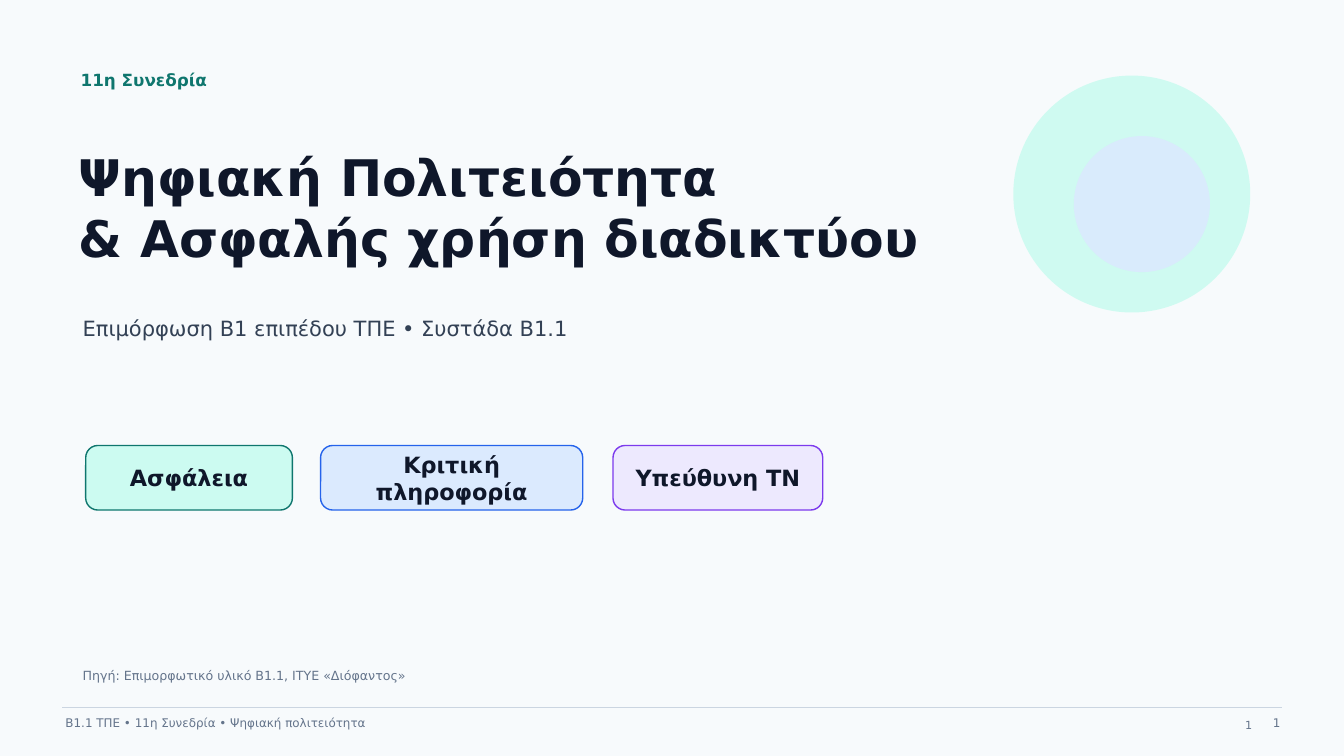
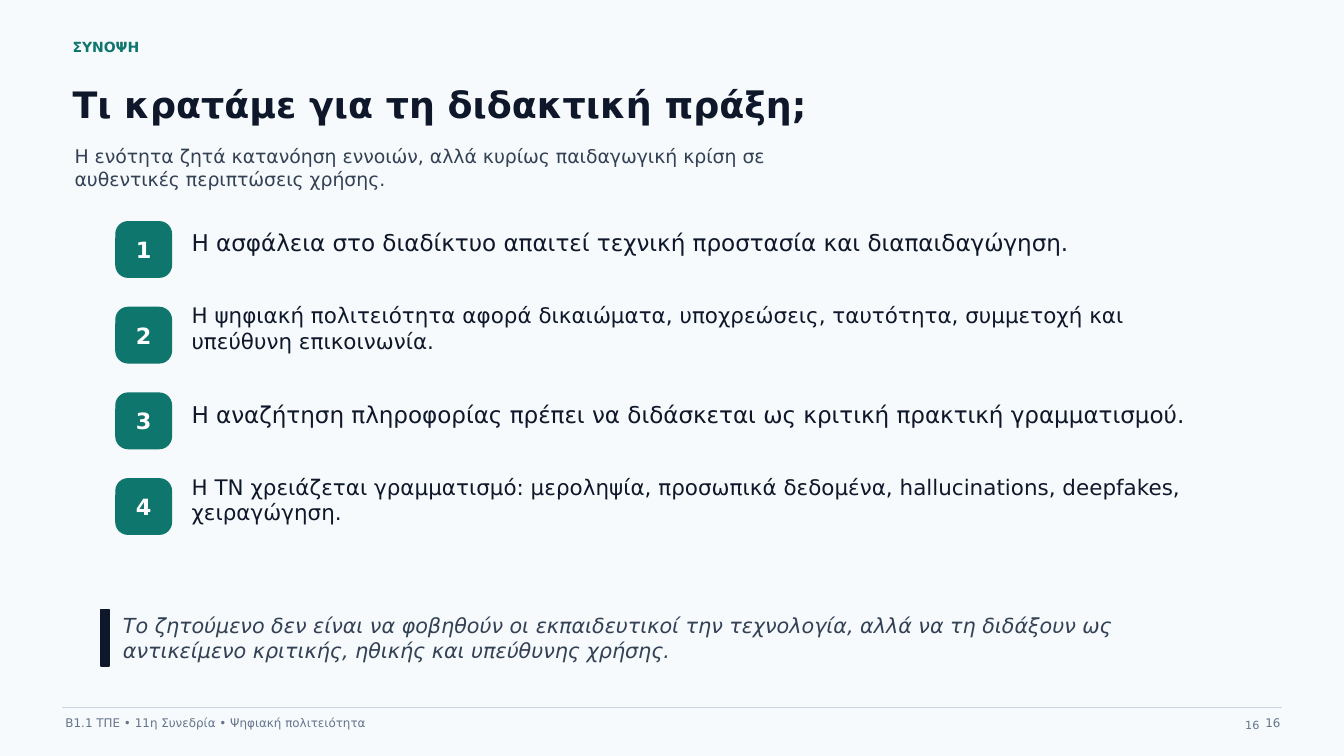
from dataclasses import dataclass

from lxml import etree
from pptx import Presentation
from pptx.dml.color import RGBColor
from pptx.enum.shapes import MSO_CONNECTOR as CONN, MSO_SHAPE as SHAPE
from pptx.enum.text import MSO_ANCHOR as ANCHOR, PP_ALIGN as ALIGN
from pptx.oxml.ns import qn
from pptx.util import Inches, Pt

# Shared look
FONT = "DejaVu Sans"
PAPER, INK, SLATE, MUTED, RULE = "F7FAFC", "0F172A", "334155", "64748B", "CBD5E1"
TEAL, MINT, BLUE, SKY = "0F766E", "CCFBF1", "2563EB", "DBEAFE"
VIOLET, LILAC, WHITE = "7C3AED", "EDE9FE", "FFFFFF"
FOOTER = "Β1.1 ΤΠΕ • 11η Συνεδρία • Ψηφιακή πολιτειότητα"
CORNER = 0.12


@dataclass(frozen=True)
class Style:
    size: float
    color: str = INK
    bold: bool = False
    italic: bool = False
    align: ALIGN = ALIGN.LEFT


@dataclass(frozen=True)
class Box:
    x: float
    y: float
    w: float
    h: float

    def lengths(self) -> list:
        return [Inches(v) for v in (self.x, self.y, self.w, self.h)]


@dataclass(frozen=True)
class Chip:
    text: str
    x: float
    w: float
    fill: str
    line: str


@dataclass(frozen=True)
class Point:
    text: str
    size: float


EYEBROW = Style(10, TEAL, bold=True)
TITLE = Style(26, bold=True)
SUBTITLE = Style(13.5, SLATE)
SMALL = Style(8.5, MUTED)
LABEL = Style(16, bold=True, align=ALIGN.CENTER)
BADGE = Style(16, WHITE, bold=True, align=ALIGN.CENTER)

CHIPS = [
    Chip("Ασφάλεια", 0.85, 2.05, MINT, TEAL),
    Chip("Κριτική πληροφορία", 3.18, 2.6, SKY, BLUE),
    Chip("Υπεύθυνη ΤΝ", 6.08, 2.08, LILAC, VIOLET),
]
POINTS = [
    Point("Η ασφάλεια στο διαδίκτυο απαιτεί τεχνική προστασία και "
          "διαπαιδαγώγηση.", 16.5),
    Point("Η ψηφιακή πολιτειότητα αφορά δικαιώματα, υποχρεώσεις, ταυτότητα, "
          "συμμετοχή και υπεύθυνη επικοινωνία.", 15.3),
    Point("Η αναζήτηση πληροφορίας πρέπει να διδάσκεται ως κριτική πρακτική "
          "γραμματισμού.", 16.5),
    Point("Η ΤΝ χρειάζεται γραμματισμό: μεροληψία, προσωπικά δεδομένα, "
          "hallucinations, deepfakes, χειραγώγηση.", 15.3),
]


def rgb(color: str) -> RGBColor:
    return RGBColor.from_string(color)


def write(tf, text: str, style: Style, inset: float = 0) -> None:
    """Fill a text frame, one paragraph for each line of text."""
    frame = dict.fromkeys(
        ("margin_left", "margin_top", "margin_right", "margin_bottom"),
        Inches(inset))
    frame |= {"word_wrap": True, "vertical_anchor": ANCHOR.MIDDLE}
    for name, value in frame.items():
        setattr(tf, name, value)
    font = {"name": FONT, "size": Pt(style.size), "bold": style.bold,
            "italic": style.italic}
    for i, line in enumerate(text.split("\n")):
        p = tf.add_paragraph() if i else tf.paragraphs[0]
        p.alignment = style.align
        r = p.add_run()
        r.text = line
        for name, value in font.items():
            setattr(r.font, name, value)
        r.font.color.rgb = rgb(style.color)


def add_text(s, box: Box, text: str, style: Style):
    sp = s.shapes.add_textbox(*box.lengths())
    write(sp.text_frame, text, style)
    return sp


def add_shape(s, kind: SHAPE, box: Box, fill: str, line: str = "",
              alpha: int = 100):
    sp = s.shapes.add_shape(kind, *box.lengths())
    sp.shadow.inherit = False
    sp.fill.solid()
    sp.fill.fore_color.rgb = rgb(fill)
    if alpha < 100:
        color = sp.fill._xPr.find(".//" + qn("a:srgbClr"))
        etree.SubElement(color, qn("a:alpha"), val=str(alpha * 1000))
    if line:
        sp.line.color.rgb = rgb(line)
        sp.line.width = Pt(1)
    else:
        sp.line.fill.background()
    return sp


def add_label(s, box: Box, text: str, style: Style, fill: str, line: str) -> None:
    """Rounded box with a centred label and a fixed corner radius."""
    sp = add_shape(s, SHAPE.ROUNDED_RECTANGLE, box, fill, line)
    sp.adjustments[0] = CORNER / box.h
    write(sp.text_frame, text, style, inset=0.04)


def add_footer(s, number: int) -> None:
    rule = s.shapes.add_connector(CONN.STRAIGHT, Inches(0.62), Inches(7.02),
                                  Inches(12.72), Inches(7.02))
    rule.line.color.rgb = rgb(RULE)
    rule.line.width = Pt(0.8)
    etree.SubElement(rule._element.spPr, qn("a:effectLst"))
    add_text(s, Box(0.65, 7.08, 7, 0.18), FOOTER, SMALL)
    add_text(s, Box(12.25, 7.08, 0.45, 0.18), str(number),
             Style(8.5, MUTED, align=ALIGN.RIGHT))
    # Second page number, set lower and to the left
    add_text(s, Box(12.35, 7.13, 0.67, 0.23), str(number),
             Style(8, MUTED)).text_frame.vertical_anchor = ANCHOR.TOP


def new_slide(prs, number: int):
    s = prs.slides.add_slide(prs.slide_layouts[6])
    s.background.fill.solid()
    s.background.fill.fore_color.rgb = rgb(PAPER)
    add_footer(s, number)
    return s


def cover_slide(prs) -> None:
    s = new_slide(prs, 1)
    # Circles
    add_shape(s, SHAPE.OVAL, Box(10.05, 0.75, 2.35, 2.35), MINT, alpha=92)
    add_shape(s, SHAPE.OVAL, Box(10.65, 1.35, 1.35, 1.35), SKY, alpha=90)
    # Headings
    add_text(s, Box(0.8, 0.65, 3.5, 0.28), "11η Συνεδρία",
             Style(12, TEAL, bold=True))
    add_text(s, Box(0.78, 1.25, 8.7, 1.6),
             "Ψηφιακή Πολιτειότητα\n& Ασφαλής χρήση διαδικτύου",
             Style(36, bold=True))
    add_text(s, Box(0.82, 3.08, 6.6, 0.35),
             "Επιμόρφωση Β1 επιπέδου ΤΠΕ • Συστάδα Β1.1", Style(15, SLATE))
    # Theme chips
    for chip in CHIPS:
        add_label(s, Box(chip.x, 4.42, chip.w, 0.64), chip.text, LABEL,
                  chip.fill, chip.line)
    # Source
    add_text(s, Box(0.82, 6.56, 6.6, 0.28),
             "Πηγή: Επιμορφωτικό υλικό Β1.1, ΙΤΥΕ «Διόφαντος»",
             Style(9, MUTED))


def summary_slide(prs) -> None:
    s = new_slide(prs, 16)
    # Headings
    add_text(s, Box(0.72, 0.34, 4.6, 0.25), "ΣΥΝΟΨΗ", EYEBROW)
    add_text(s, Box(0.72, 0.72, 7.8, 0.62),
             "Τι κρατάμε για τη διδακτική πράξη;", TITLE)
    add_text(s, Box(0.74, 1.42, 7.7, 0.48),
             "Η ενότητα ζητά κατανόηση εννοιών, αλλά κυρίως παιδαγωγική κρίση "
             "σε αυθεντικές περιπτώσεις χρήσης.", SUBTITLE)
    # Numbered points
    for i, point in enumerate(POINTS):
        y = 2.2 + 0.85 * i
        add_label(s, Box(1.15, y, 0.55, 0.55), str(i + 1), BADGE, TEAL, TEAL)
        add_text(s, Box(1.9, y - 0.02, 9.85, 0.45), point.text,
                 Style(point.size))
    # Closing remark
    add_shape(s, SHAPE.RECTANGLE, Box(1, 6.05, 0.08, 0.56), INK, INK)
    add_text(s, Box(1.22, 6.1, 10.6, 0.46),
             "Το ζητούμενο δεν είναι να φοβηθούν οι εκπαιδευτικοί την "
             "τεχνολογία, αλλά να τη διδάξουν ως αντικείμενο κριτικής, ηθικής "
             "και υπεύθυνης χρήσης.", Style(14.8, SLATE, italic=True))


def main() -> None:
    prs = Presentation()
    prs.slide_width, prs.slide_height = Inches(13.33), Inches(7.5)
    cover_slide(prs)
    summary_slide(prs)
    prs.save("out.pptx")


if __name__ == "__main__":
    main()
